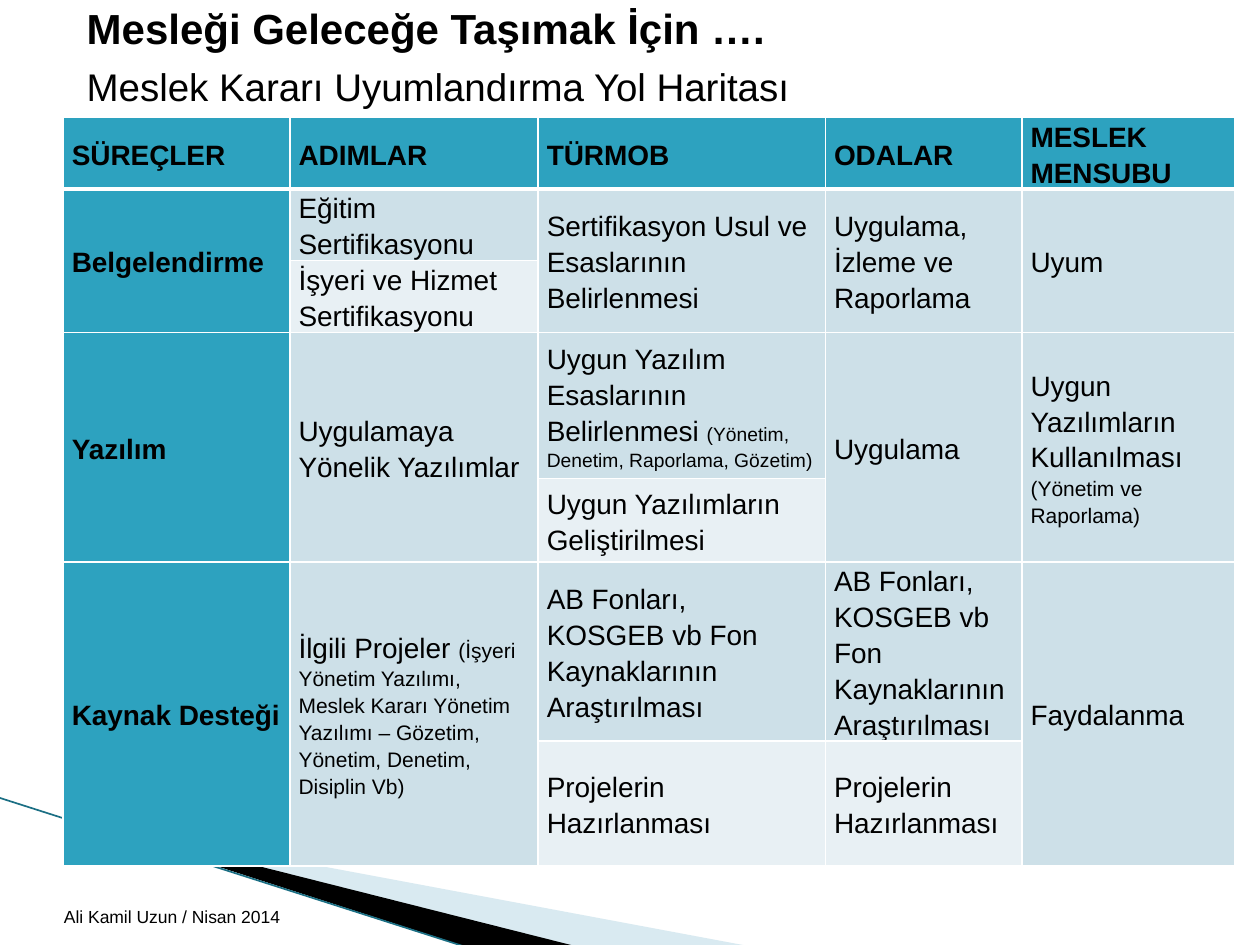
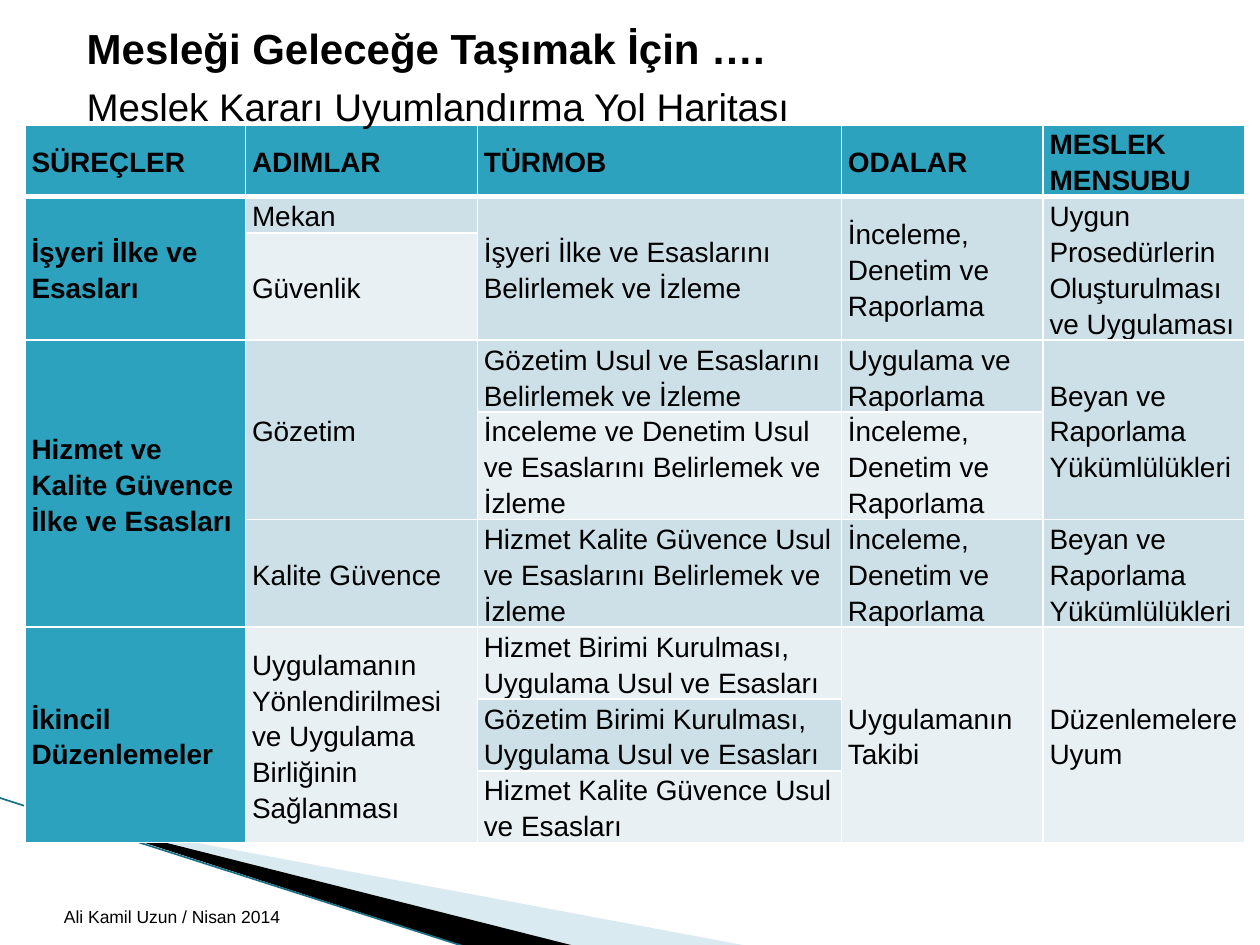
from lxml import etree
from pptx import Presentation
from pptx import util as u
from pptx.dml.color import RGBColor
from pptx.enum import shapes, text
from pptx.oxml import ns

COLORS = {
    "ink": "000000",
    "header": "2DA2BF",
    "dark_band": "CDE0E8",
    "light_band": "E8F0F4",
    "grid": "FFFFFF",
    "wedge": "A0CBDC",
    "edge": "1B6F84",
}
HEADINGS = ["SÜREÇLER", "ADIMLAR", "TÜRMOB", "ODALAR", "MESLEK MENSUBU"]
FUNDING = "AB Fonları,\nKOSGEB vb Fon Kaynaklarının Araştırılması"
PROJECTS = "Projelerin Hazırlanması"
REVIEW = "İnceleme, Denetim ve Raporlama"
DECLARATION = "Beyan ve Raporlama Yükümlülükleri"

CERTIFICATION_ROWS = [
    HEADINGS,
    ["Belgelendirme", "Eğitim Sertifikasyonu",
     "Sertifikasyon Usul ve Esaslarının Belirlenmesi",
     "Uygulama, İzleme ve Raporlama", "Uyum"],
    [None, "İşyeri ve Hizmet Sertifikasyonu", None, None, None],
    ["Yazılım", "Uygulamaya Yönelik Yazılımlar",
     ("Uygun Yazılım Esaslarının Belirlenmesi ",
      "(Yönetim, Denetim, Raporlama, Gözetim)", 11),
     "Uygulama",
     ("Uygun Yazılımların Kullanılması ", "(Yönetim ve Raporlama)", 12)],
    [None, None, "Uygun Yazılımların Geliştirilmesi", None, None],
    ["Kaynak Desteği",
     ("İlgili Projeler ",
      "(İşyeri Yönetim Yazılımı, Meslek Kararı Yönetim Yazılımı – Gözetim, "
      "Yönetim, Denetim, Disiplin Vb)", 12),
     FUNDING, FUNDING, "Faydalanma"],
    [None, None, PROJECTS, PROJECTS, None],
]
PRINCIPLES_ROWS = [
    HEADINGS,
    ["İşyeri İlke ve Esasları", "Mekan",
     "İşyeri İlke ve Esaslarını Belirlemek ve İzleme", REVIEW,
     "Uygun Prosedürlerin Oluşturulması ve Uygulaması"],
    [None, "Güvenlik", None, None, None],
    ["Hizmet ve Kalite Güvence İlke ve Esasları", "Gözetim",
     "Gözetim Usul ve Esaslarını Belirlemek ve İzleme",
     "Uygulama ve Raporlama", DECLARATION],
    [None, None, "İnceleme ve Denetim Usul ve Esaslarını Belirlemek ve İzleme",
     REVIEW, None],
    [None, "Kalite Güvence",
     "Hizmet Kalite Güvence Usul ve Esaslarını Belirlemek ve İzleme",
     REVIEW, DECLARATION],
    ["İkincil Düzenlemeler",
     "Uygulamanın Yönlendirilmesi ve Uygulama Birliğinin Sağlanması",
     "Hizmet Birimi Kurulması, Uygulama Usul ve Esasları",
     "Uygulamanın Takibi", "Düzenlemelere Uyum"],
    [None, None, "Gözetim Birimi Kurulması, Uygulama Usul ve Esasları", None, None],
    [None, None, "Hizmet Kalite Güvence Usul ve Esasları", None, None],
]


def color(name):
    return RGBColor.from_string(COLORS[name])


def write(para, words, size=16, bold=False):
    for number, line in enumerate(words.split("\n")):
        if number:
            para.add_line_break()
        span = para.add_run()
        span.text = line
        span.font.name = "Arial"
        span.font.size = u.Pt(size)
        span.font.bold = bold
        span.font.color.rgb = color("ink")


def draw_borders(cell, top, bottom):
    properties = cell._tc.get_or_add_tcPr()
    widths = {"lnL": 1, "lnR": 1, "lnT": top, "lnB": bottom}
    for position, (side, width) in enumerate(widths.items()):
        border = etree.Element(ns.qn(f"a:{side}"), w=str(u.Pt(width)))
        fill = etree.SubElement(border, ns.qn("a:solidFill"))
        etree.SubElement(fill, ns.qn("a:srgbClr"), val=COLORS["grid"])
        properties.insert(position, border)


class RoadmapDeck:
    def __init__(self):
        self.deck = Presentation()
        self.deck.slide_width = u.Inches(10)
        self.deck.slide_height = u.Inches(7.5)
        self.page = None

    def add_page(self):
        self.page = self.deck.slides.add_slide(self.deck.slide_layouts[6])
        self.add_wedge([(0.55, 6.5), (5.95, 7.51), (4.56, 7.51)], "wedge", 40)
        self.add_wedge([(0.53, 6.49), (4.57, 7.51), (3.72, 7.52)], "ink")
        self.add_line((-0.01, 6.33), (3.71, 7.52))
        frame = self.add_box(0, 7.01, 2.32, 0.4)
        frame.vertical_anchor = text.MSO_ANCHOR.BOTTOM
        frame.paragraphs[0].alignment = text.PP_ALIGN.RIGHT
        write(frame.paragraphs[0], "Ali Kamil Uzun / Nisan 2014", size=10)

    def add_wedge(self, points, fill, opacity=100):
        corners = [(u.Inches(x), u.Inches(y)) for x, y in points]
        builder = self.page.shapes.build_freeform(*corners[0])
        builder.add_line_segments(corners[1:])
        wedge = builder.convert_to_shape()
        wedge.shadow.inherit = False
        wedge.line.fill.background()
        wedge.fill.solid()
        wedge.fill.fore_color.rgb = color(fill)
        if opacity < 100:
            tint = wedge.fill._xPr.find(".//" + ns.qn("a:srgbClr"))
            etree.SubElement(tint, ns.qn("a:alpha"), val=str(opacity * 1000))

    def add_line(self, start, end):
        line = self.page.shapes.add_connector(
            shapes.MSO_CONNECTOR.STRAIGHT, *(u.Inches(v) for v in start + end))
        line.line.color.rgb = color("edge")
        line.line.width = u.Pt(0.95)
        etree.SubElement(line._element.spPr, ns.qn("a:effectLst"))

    def add_box(self, *place):
        box = self.page.shapes.add_textbox(*map(u.Inches, place))
        box.text_frame.word_wrap = True
        return box.text_frame

    def add_title(self, top):
        frame = self.add_box(0.59, top, 9.06, 1.02)
        write(frame.paragraphs[0], "Mesleği Geleceğe Taşımak İçin ….", size=24, bold=True)
        subtitle = frame.add_paragraph()
        subtitle.space_before = u.Pt(6)
        write(subtitle, "Meslek Kararı Uyumlandırma Yol Haritası", size=22)

    def add_table(self, left, top, widths, heights, rows, margin):
        table = self.page.shapes.add_table(
            len(rows), len(widths), u.Inches(left), u.Inches(top),
            u.Inches(sum(widths)), u.Inches(sum(heights))).table
        table.first_row = table.horz_banding = False
        for column, width in zip(table.columns, widths):
            column.width = u.Inches(width)
        for row, height in zip(table.rows, heights):
            row.height = u.Inches(height)
        for r, row in enumerate(rows):
            for c, content in enumerate(row):
                cell = table.cell(r, c)
                self.style_cell(cell, r, c, margin)
                if content is None:
                    continue
                self.fill_cell(cell, content, bold=r == 0 or c == 0)
                last = r
                while last + 1 < len(rows) and rows[last + 1][c] is None:
                    last += 1
                if last > r:
                    cell.merge(table.cell(last, c))

    def style_cell(self, cell, r, c, margin):
        band = "dark_band" if r % 2 else "light_band"
        cell.fill.solid()
        cell.fill.fore_color.rgb = color("header" if r == 0 or c == 0 else band)
        cell.vertical_anchor = text.MSO_ANCHOR.MIDDLE
        cell.margin_left = cell.margin_right = u.Inches(margin)
        cell.margin_top = cell.margin_bottom = 0
        draw_borders(cell, top=3 if r == 1 else 1, bottom=3 if r == 0 else 1)

    def fill_cell(self, cell, content, bold):
        para = cell.text_frame.paragraphs[0]
        if isinstance(content, tuple):
            words, note, note_size = content
            para.line_spacing = 1.15
            write(para, words, bold=bold)
            write(para, note, size=note_size)
        else:
            para.line_spacing = u.Pt(20.5)
            write(para, content, bold=bold)


def main():
    roadmap = RoadmapDeck()

    roadmap.add_page()
    roadmap.add_table(
        0.5, 0.93, [1.8, 1.97, 2.28, 1.56, 1.69],
        [0.56, 0.57, 0.57, 1.16, 0.66, 1.42, 0.99], CERTIFICATION_ROWS, margin=0.07)
    roadmap.add_title(-0.03)

    roadmap.add_page()
    roadmap.add_table(
        0.2, 0.99, [1.75, 1.84, 2.89, 1.6, 1.6],
        [0.57, 0.29, 0.85, 0.57, 0.85, 0.85, 0.57, 0.57, 0.57], PRINCIPLES_ROWS, margin=0.05)
    roadmap.add_title(0.13)

    roadmap.deck.save("out.pptx")


if __name__ == "__main__":
    main()
